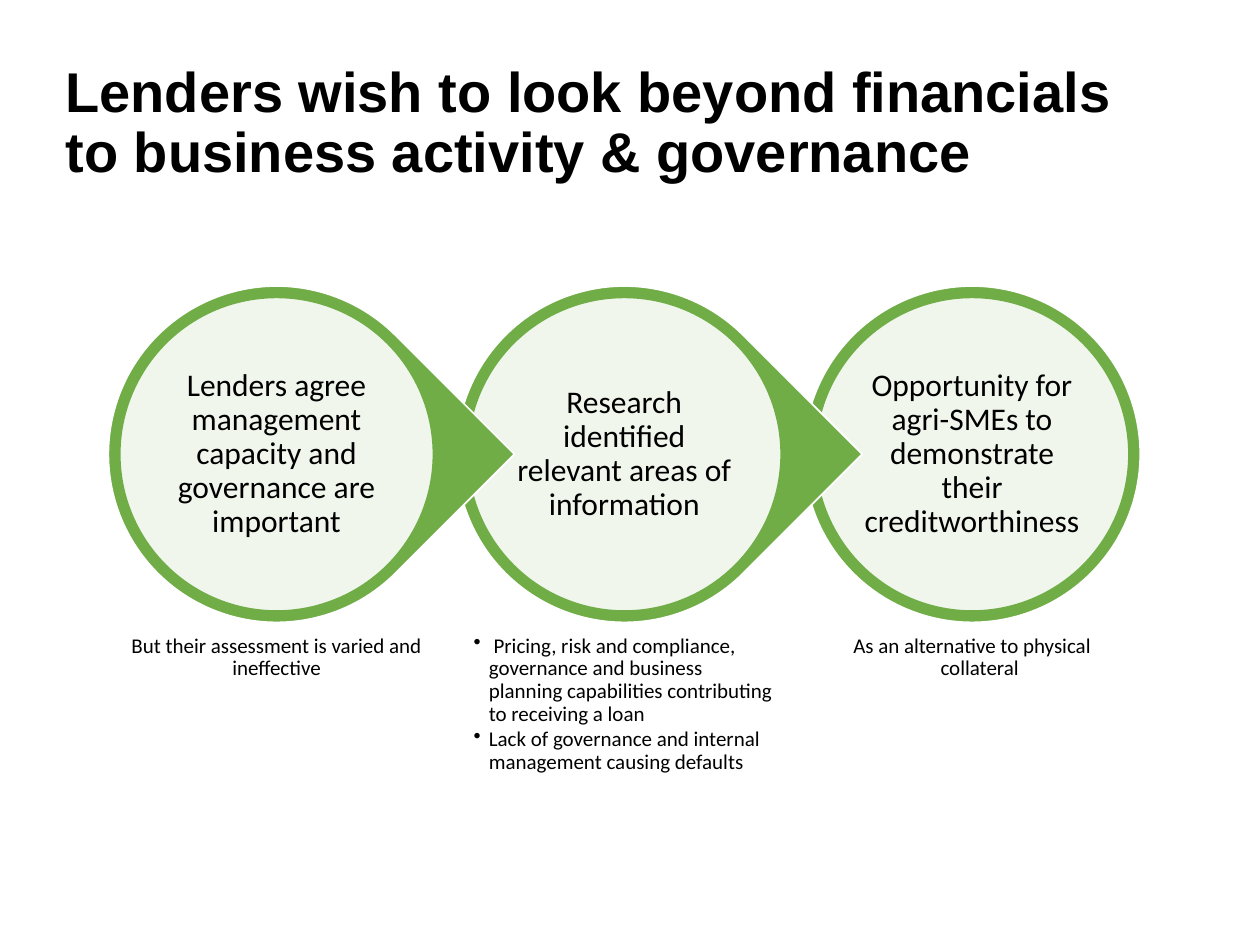
from lxml.etree import SubElement
from pptx import Presentation
from pptx.dml.color import RGBColor
from pptx.enum.shapes import MSO_SHAPE
from pptx.enum.text import MSO_ANCHOR, MSO_AUTO_SIZE, PP_ALIGN
from pptx.oxml.ns import qn
from pptx.util import Inches, Pt

GREEN = RGBColor(0x70, 0xAD, 0x47)
WHITE = RGBColor(0xFF, 0xFF, 0xFF)
BLACK = RGBColor(0, 0, 0)

LEFT, TOP, PITCH, SIZE = 0.95, 2.36, 2.76, 2.49  # inner discs, inches
RIM, INSET = 0.09, 0.36
NOTE_TOP, NOTE_HIGH = 4.99, 1.46
HANG = 0.12

HEAD = {"size": Pt(32), "name": "Arial", "bold": True}
LABEL = {"size": Pt(18), "name": "Calibri"}
NOTE = {"size": Pt(12), "name": "Calibri"}

STAGES = [
    {"label": "Lenders agree management capacity and governance are important",
     "notes": ["But their assessment is varied and ineffective"],
     "hang": 0},
    {"label": "Research identified relevant areas of information",
     "notes": [" Pricing, risk and compliance, governance and business planning "
               "capabilities contributing to receiving a loan",
               "Lack of governance and internal management causing defaults"],
     "hang": HANG, "bullet": True},
    {"label": "Opportunity for agri-SMEs to demonstrate their creditworthiness",
     "notes": ["As an alternative to physical collateral"],
     "hang": HANG},
]


def style(para, look, align, after=0):
    para.alignment, para.line_spacing = align, 0.9
    para.space_before, para.space_after = Pt(0), Pt(after)
    for key, value in look.items():
        setattr(para.font, key, value)
    para.font.color.rgb = BLACK


def add_title(slide, box):
    title = slide.shapes.title
    title.left, title.top, title.width, title.height = map(Inches, box)
    frame = title.text_frame
    frame.text = "Lenders wish to look beyond financials to business activity & governance"
    frame.auto_size, frame.vertical_anchor = MSO_AUTO_SIZE.NONE, MSO_ANCHOR.MIDDLE
    style(frame.paragraphs[0], HEAD, PP_ALIGN.LEFT)


def add_disc(slide, kind, box, fill, line):
    disc = slide.shapes.add_shape(kind, *map(Inches, box))
    disc.shadow.inherit = False
    disc.fill.solid()
    disc.fill.fore_color.rgb = fill
    disc.line.color.rgb, disc.line.width = line, Pt(1)
    return disc


def fade(shape, share):
    tint = shape.fill._xPr.find(qn("a:solidFill"))[0]
    SubElement(tint, qn("a:alpha")).set("val", str(share * 1000))


def add_text(slide, box, inset, anchor):
    frame = slide.shapes.add_textbox(*map(Inches, box)).text_frame
    frame.word_wrap, frame.vertical_anchor = True, anchor
    for side in ("left", "top", "right", "bottom"):
        setattr(frame, "margin_" + side, Inches(inset))
    return frame


def add_notes(slide, box, stage):
    frame = add_text(slide, box, 0.05, MSO_ANCHOR.TOP)
    bullet = stage.get("bullet")
    for i, words in enumerate(stage["notes"]):
        para = frame.add_paragraph() if i else frame.paragraphs[0]
        para.text, para.level = words, 1
        props = para._p.get_or_add_pPr()
        props.set("marL", str(Inches(stage["hang"])))
        props.set("indent", str(-Inches(stage["hang"])))
        if bullet:
            SubElement(props, qn("a:buChar")).set("char", "•")
        style(para, NOTE, PP_ALIGN.LEFT if bullet else PP_ALIGN.CENTER, 1.8)


def add_stage(slide, left, stage, last):
    """Draw one rimmed disc with its label and the notes below it."""
    wide = SIZE + 2 * RIM
    kind = MSO_SHAPE.OVAL if last else MSO_SHAPE.TEAR
    rim = add_disc(slide, kind, (left - RIM, TOP - RIM, wide, wide), GREEN, WHITE)
    rim.rotation = 0 if last else 45
    face = add_disc(slide, MSO_SHAPE.OVAL, (left, TOP, SIZE, SIZE), WHITE, GREEN)
    fade(face, 90)
    core = SIZE - 2 * INSET
    frame = add_text(slide, (left + INSET, TOP + INSET, core, core), 0.03, MSO_ANCHOR.MIDDLE)
    frame.text = stage["label"]
    style(frame.paragraphs[0], LABEL, PP_ALIGN.CENTER, 6.3)
    add_notes(slide, (left, NOTE_TOP, SIZE, NOTE_HIGH), stage)


def main():
    deck = Presentation()
    deck.slide_width, deck.slide_height = Inches(10), Inches(7.5)
    slide = deck.slides.add_slide(deck.slide_layouts[5])
    add_title(slide, (0.42, 0.25, 8.79, 1.47))
    final = len(STAGES) - 1
    for i in range(final, -1, -1):  # each point overlaps the disc to its right
        add_stage(slide, LEFT + i * PITCH, STAGES[i], i == final)
    deck.save("out.pptx")


if __name__ == "__main__":
    main()
